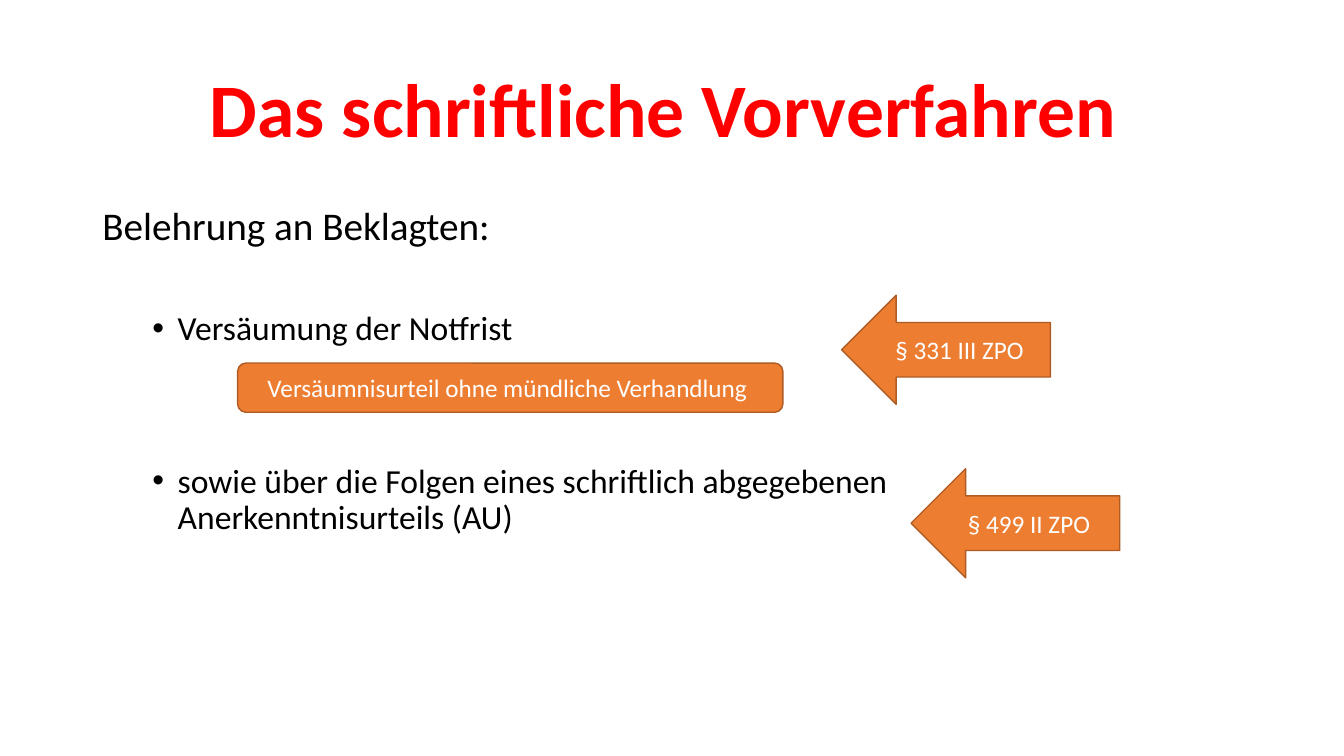
from dataclasses import dataclass

from lxml import etree
from pptx import Presentation
from pptx.dml.color import RGBColor
from pptx.enum.shapes import MSO_SHAPE as Preset
from pptx.enum.text import MSO_ANCHOR as Anchor, MSO_AUTO_SIZE as AutoSize, PP_ALIGN as Align
from pptx.oxml.ns import qn
from pptx.util import Cm, Pt


@dataclass(frozen=True)
class Theme:
    font: str = "Calibri"
    heading: RGBColor = RGBColor(0xFF, 0x00, 0x00)
    body: RGBColor = RGBColor(0x00, 0x00, 0x00)
    accent: RGBColor = RGBColor(0xED, 0x7D, 0x31)
    outline: RGBColor = RGBColor(0xAF, 0x5C, 0x24)
    on_accent: RGBColor = RGBColor(0xFF, 0xFF, 0xFF)
    heading_size: int = 54
    lead_size: int = 28
    bullet_size: int = 24
    label_size: int = 18


class SlideBuilder:
    def __init__(self, deck, theme):
        self.theme = theme
        self.slide = deck.slides.add_slide(deck.slide_layouts[5])

    def place(self, shape, left, top, width, height):
        shape.left, shape.top = Cm(left), Cm(top)
        shape.width, shape.height = Cm(width), Cm(height)

    def style(self, paragraph, size, color, bold=False):
        font = paragraph.font
        font.name, font.size, font.bold = self.theme.font, Pt(size), bold
        font.color.rgb = color

    def title(self, text, *box):
        heading = self.slide.shapes.title
        self.place(heading, *box)
        frame = heading.text_frame
        frame.text = text
        frame.auto_size = AutoSize.NONE
        frame.vertical_anchor = Anchor.MIDDLE
        paragraph = frame.paragraphs[0]
        paragraph.alignment, paragraph.line_spacing = Align.CENTER, 0.9
        self.style(paragraph, self.theme.heading_size, self.theme.heading, bold=True)

    def bullet_list(self, lead, points, *box):
        """Write a lead line and its points, given as (text, points of space before)."""
        frame = self.slide.shapes.add_textbox(*map(Cm, box)).text_frame
        frame.word_wrap = True
        opening = frame.paragraphs[0]
        opening.text, opening.line_spacing = lead, 0.9
        self.style(opening, self.theme.lead_size, self.theme.body)
        for text, gap in points:
            point = frame.add_paragraph()
            point.text, point.level = text, 1
            point.line_spacing, point.space_before = 0.9, Pt(gap)
            self.style(point, self.theme.bullet_size, self.theme.body)
            self.add_bullet(point)

    def add_bullet(self, paragraph):
        properties = paragraph._p.get_or_add_pPr()
        properties.set("marL", str(Cm(1.9)))
        properties.set("indent", str(Cm(-0.64)))
        bullet_font = etree.Element(qn("a:buFont"), typeface="Arial")
        bullet = etree.Element(qn("a:buChar"), char="•")
        spacing = properties.find(qn("a:spcBef"))
        spacing.addnext(bullet_font)
        bullet_font.addnext(bullet)

    def label(self, preset, text, *box):
        shape = self.slide.shapes.add_shape(preset, *map(Cm, box))
        shape.shadow.inherit = False
        shape.fill.solid()
        shape.fill.fore_color.rgb = self.theme.accent
        shape.line.color.rgb = self.theme.outline
        shape.line.width = Pt(1)
        frame = shape.text_frame
        frame.text = text
        frame.vertical_anchor = Anchor.MIDDLE
        frame.paragraphs[0].alignment = Align.CENTER
        self.style(frame.paragraphs[0], self.theme.label_size, self.theme.on_accent)


def main():
    deck = Presentation()
    deck.slide_width, deck.slide_height = Cm(33.87), Cm(19.05)
    builder = SlideBuilder(deck, Theme())
    builder.title("Das schriftliche Vorverfahren ", 2.33, 1.01, 29.21, 3.68)
    builder.bullet_list(
        "Belehrung an Beklagten:",
        [
            ("Versäumung der Notfrist", 45),
            ("sowie über die Folgen eines schriftlich abgegebenen \vAnerkenntnisurteils (AU)", 83),
        ],
        2.33, 5.07, 29.21, 12.09,
    )
    builder.label(Preset.ROUNDED_RECTANGLE, "Versäumnisurteil ohne mündliche Verhandlung ",
                  5.99, 9.15, 13.74, 1.24)
    for statute, left, top in [("§ 331 III ZPO", 21.21, 7.44), ("§ 499 II ZPO", 22.96, 11.81)]:
        builder.label(Preset.LEFT_ARROW, statute, left, top, 5.26, 2.75)
    deck.save("out.pptx")


if __name__ == "__main__":
    main()
